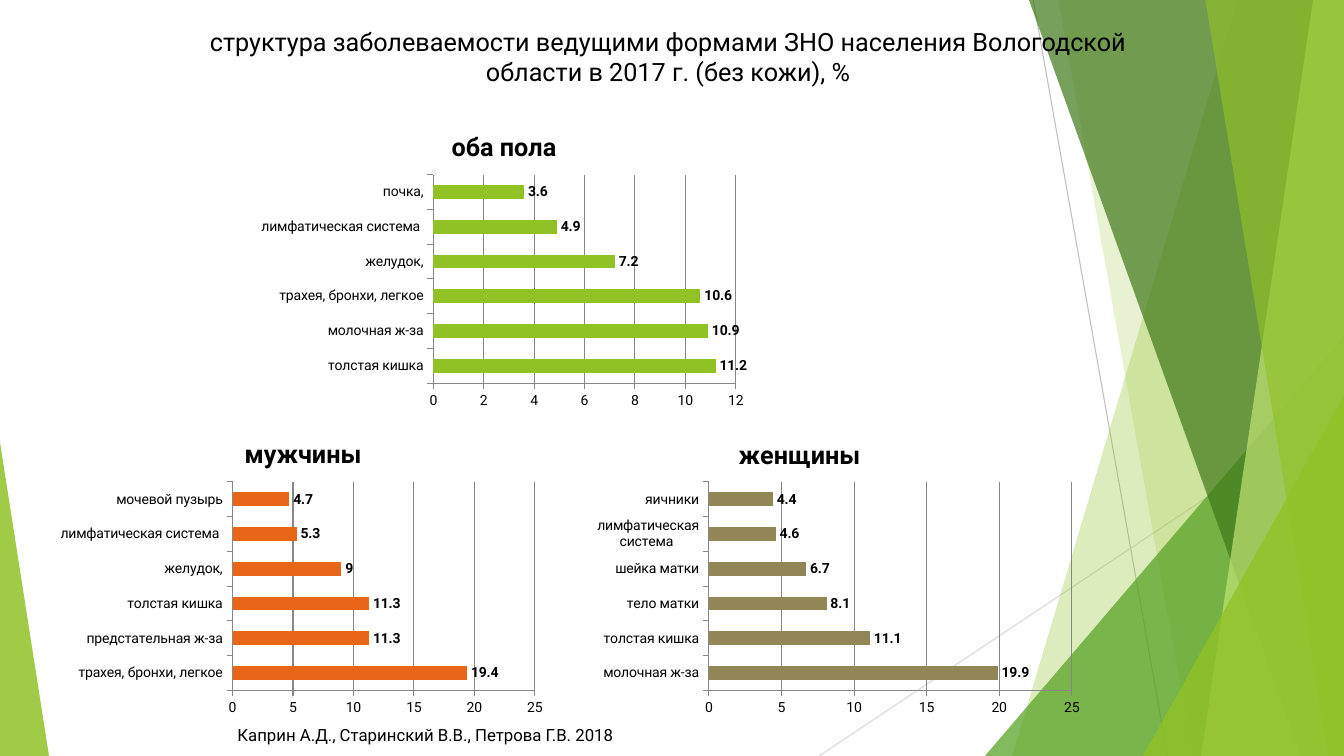
from dataclasses import dataclass

from lxml import etree
from pptx import Presentation
from pptx.chart.data import CategoryChartData
from pptx.dml.color import RGBColor
from pptx.enum.chart import XL_CHART_TYPE, XL_LABEL_POSITION, XL_TICK_MARK
from pptx.enum.shapes import MSO_CONNECTOR, MSO_SHAPE
from pptx.enum.text import PP_ALIGN
from pptx.oxml import parse_xml
from pptx.oxml.ns import nsdecls, qn
from pptx.util import Pt

BARS = XL_CHART_TYPE.BAR_CLUSTERED
OUTSIDE_END = XL_LABEL_POSITION.OUTSIDE_END
TICK_OUT = XL_TICK_MARK.OUTSIDE
STRAIGHT = MSO_CONNECTOR.STRAIGHT
TRIANGLE = MSO_SHAPE.ISOSCELES_TRIANGLE
CENTER, LEFT = PP_ALIGN.CENTER, PP_ALIGN.LEFT
WIDTH, HEIGHT = 960, 540


@dataclass(frozen=True)
class Theme:
    font: str = "Roboto"
    text: str = "000000"
    green: str = "90C226"
    mid_green: str = "54A021"
    dark_green: str = "3F7819"
    light_green: str = "C0E474"
    orange: str = "E76618"
    tan: str = "918655"
    axis: str = "878787"
    ray: str = "BFBFBF"
    pale_ray: str = "D9D9D9"
    heading_size: int = 18
    source_size: int = 12
    chart_size: int = 10


THEME = Theme()


def rgb(color):
    return RGBColor.from_string(color)


def style_font(font, size, bold=False):
    font.name, font.size, font.bold = THEME.font, Pt(size), bold
    font.color.rgb = rgb(THEME.text)


def paint(facet, color, opacity):
    """Fill a facet with a see-through colour and no outline."""
    facet.shadow.inherit = False
    facet.line.fill.background()
    facet.fill.solid()
    facet.fill.fore_color.rgb = rgb(color)
    tint = facet.fill._xPr.find(qn("a:solidFill"))[0]
    etree.SubElement(tint, qn("a:alpha")).set("val", str(opacity * 1000))


def add_ray(slide, start, end, color):
    ray = slide.shapes.add_connector(STRAIGHT, *map(Pt, start + end))
    ray.line.color.rgb = rgb(color)
    ray.line.width = Pt(0.75)
    etree.SubElement(ray._element.spPr, qn("a:effectLst"))


def add_band(slide, top_x, bottom_x, color, opacity):
    """Facet between a slanted left edge and the right side of the slide."""
    outline = slide.shapes.build_freeform(Pt(top_x), 0, scale=1.0)
    corners = [(WIDTH, 0), (WIDTH, HEIGHT), (bottom_x, HEIGHT)]
    outline.add_line_segments([(Pt(x), Pt(y)) for x, y in corners])
    paint(outline.convert_to_shape(), color, opacity)


def add_corner(slide, left, top, width, apex, color, opacity):
    """Triangle standing on the bottom edge, apex 0 at its left or 1 at its right."""
    corner = slide.shapes.add_shape(
        TRIANGLE, Pt(left), Pt(top), Pt(width), Pt(HEIGHT - top))
    corner.adjustments[0] = apex
    paint(corner, color, opacity)


def add_backdrop(slide):
    add_ray(slide, (738, 0), (834, HEIGHT), THEME.ray)
    add_ray(slide, (WIDTH, 290), (585, HEIGHT), THEME.pale_ray)
    add_band(slide, 884, 723, THEME.green, 30)
    add_band(slide, 756, 852, THEME.green, 20)
    add_corner(slide, 703.5, 240, 256.5, 1, THEME.mid_green, 72)
    add_band(slide, 735, 929.5, THEME.dark_green, 70)
    add_band(slide, 938, 858, THEME.light_green, 70)
    add_band(slide, 861, 949, THEME.green, 65)
    add_corner(slide, 816.5, 283, 143.5, 1, THEME.green, 80)
    add_corner(slide, 0, 316, 35, 0, THEME.green, 85)


def add_text(slide, box, wording, size, align):
    frame = slide.shapes.add_textbox(*map(Pt, box)).text_frame
    frame.word_wrap = True
    paragraph = frame.paragraphs[0]
    paragraph.text, paragraph.alignment = wording, align
    style_font(paragraph.font, size)


def place(part, after, target="", **fractions):
    """Fix a chart part at fractions of the chart, right after one of its children."""
    for old in part.findall(qn("c:layout")):
        part.remove(old)
    inner = f'<c:layoutTarget val="{target}"/>' if target else ""
    modes = "".join(f'<c:{axis}Mode val="edge"/>' for axis in "xy")
    sizes = "".join(f'<c:{key} val="{value}"/>' for key, value in fractions.items())
    layout = parse_xml(f'<c:layout {nsdecls("c")}><c:manualLayout>{inner}{modes}'
                       f'{sizes}</c:manualLayout></c:layout>')
    if after:
        part.find(qn(after)).addnext(layout)
    else:
        part.insert(0, layout)


def style_axis(axis):
    axis.major_tick_mark = TICK_OUT
    axis.format.line.color.rgb = rgb(THEME.axis)
    style_font(axis.tick_labels.font, THEME.chart_size)


def add_bar_chart(slide, box, heading, shares, color, maximum, step,
                  plot_left, heading_at=None):
    data = CategoryChartData()
    data.categories = [site for site, _ in shares]
    data.add_series("Series 1", [share for _, share in shares])
    chart = slide.shapes.add_chart(BARS, *map(Pt, box), data).chart
    style_font(chart.font, THEME.chart_size)
    chart.has_legend = False

    chart.has_title = True
    chart.chart_title.include_in_layout = False
    title = chart.chart_title.text_frame.paragraphs[0]
    title.text = heading
    style_font(title.font, THEME.heading_size, bold=True)
    if heading_at:
        place(chart.chart_title._element, "c:tx", x=heading_at[0], y=heading_at[1])

    style_axis(chart.category_axis)
    scale = chart.value_axis
    style_axis(scale)
    scale.minimum_scale, scale.maximum_scale, scale.major_unit = 0, maximum, step
    scale.has_major_gridlines = True
    scale.major_gridlines.format.line.color.rgb = rgb(THEME.axis)

    plot = chart.plots[0]
    plot.gap_width, plot.vary_by_categories = 150, False
    bars = plot.series[0]
    bars.format.fill.solid()
    bars.format.fill.fore_color.rgb = rgb(color)
    labels = bars.data_labels
    labels.show_value, labels.position = True, OUTSIDE_END
    style_font(labels.font, THEME.chart_size, bold=True)
    place(chart._chartSpace.chart.plotArea, None, "inner",
          x=plot_left, y=0.2, w=round(0.965 - plot_left, 2), h=0.69)


def add_charts(slide):
    size = (360, 216)
    add_bar_chart(slide, (180, 81.5, *size), "оба пола", [
        ("толстая кишка", 11.2), ("молочная ж-за", 10.9),
        ("трахея, бронхи, легкое", 10.6), ("желудок,", 7.2),
        ("лимфатическая система ", 4.9), ("почка,", 3.6),
    ], THEME.green, 12, 2, 0.36)
    add_bar_chart(slide, (36.5, 301, *size), "мужчины", [
        ("трахея, бронхи, легкое", 19.4), ("предстательная ж-за", 11.3),
        ("толстая кишка", 11.3), ("желудок,", 9),
        ("лимфатическая система ", 5.3), ("мочевой пузырь", 4.7),
    ], THEME.orange, 25, 5, 0.36)
    add_bar_chart(slide, (420, 301, *size), "женщины", [
        ("молочная ж-за", 19.9), ("толстая кишка", 11.1),
        ("тело матки", 8.1), ("шейка матки", 6.7),
        ("лимфатическая система ", 4.6), ("яичники", 4.4),
    ], THEME.tan, 25, 5, 0.24, heading_at=(0.29, 0.04))


def main():
    deck = Presentation()
    deck.slide_width, deck.slide_height = Pt(WIDTH), Pt(HEIGHT)
    slide = deck.slides.add_slide(deck.slide_layouts[6])
    add_backdrop(slide)
    add_text(slide, (140, 15, 674.5, 51),
             "структура заболеваемости ведущими формами ЗНО населения "
             "Вологодской области в 2017 г. (без кожи), %",
             THEME.heading_size, CENTER)
    add_charts(slide)
    add_text(slide, (162.5, 514, 360, 22),
             "Каприн А.Д., Старинский В.В., Петрова Г.В. 2018",
             THEME.source_size, LEFT)
    deck.save("out.pptx")


if __name__ == "__main__":
    main()
